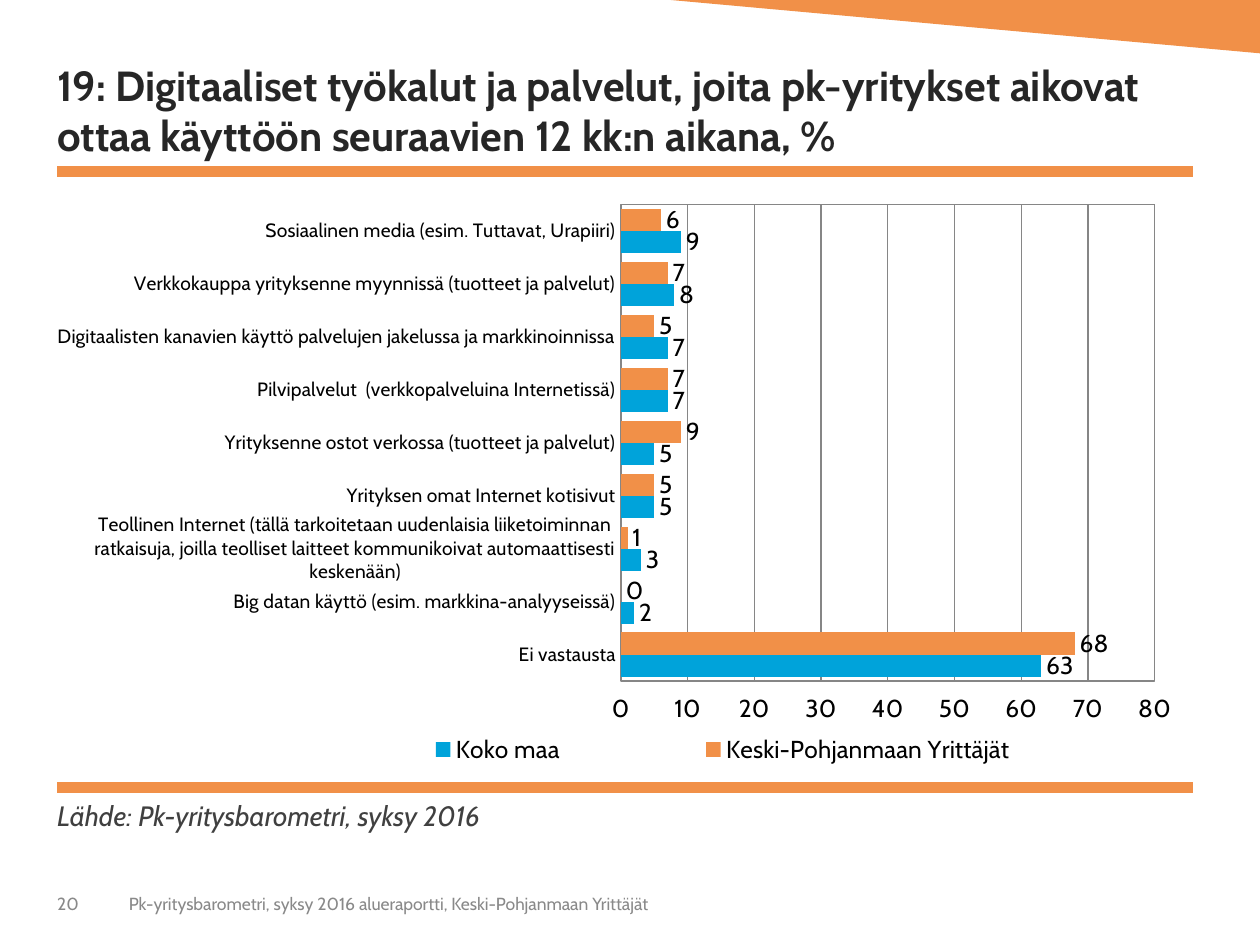
from pptx import Presentation
from pptx.chart.data import CategoryChartData as Data
from pptx.dml.color import RGBColor as RGB
from pptx.enum.chart import (
    XL_CHART_TYPE as Kind,
    XL_LABEL_POSITION as Spot,
    XL_LEGEND_POSITION as Side,
    XL_TICK_LABEL_POSITION as Place,
    XL_TICK_MARK as Tick,
)
from pptx.enum.shapes import MSO_CONNECTOR as Link
from pptx.enum.text import MSO_ANCHOR as Anchor, MSO_AUTO_SIZE as Fit, PP_ALIGN as Align
from pptx.oxml import parse_xml
from pptx.oxml.ns import nsdecls, qn
from pptx.util import Pt

FONT = "Cabin"
ORANGE = RGB(0xF1, 0x90, 0x48)
BLUE = RGB(0x00, 0xA3, 0xDA)
BLACK = RGB(0, 0, 0)
DARK = RGB(0x26, 0x26, 0x26)
SOFT = RGB(0x40, 0x40, 0x40)
GREY = RGB(0x89, 0x89, 0x89)
GRID = RGB(0x86, 0x86, 0x86)

LEFT = 32.7
WIDE = 649.2

CATS = [
    "Sosiaalinen media (esim. Tuttavat, Urapiiri)",
    "Verkkokauppa yrityksenne myynnissä (tuotteet ja palvelut)",
    "Digitaalisten kanavien käyttö palvelujen jakelussa ja markkinoinnissa",
    "Pilvipalvelut  (verkkopalveluina Internetissä)",
    "Yrityksenne ostot verkossa (tuotteet ja palvelut)",
    "Yrityksen omat Internet kotisivut",
    "Teollinen Internet (tällä tarkoitetaan uudenlaisia liiketoiminnan ratkaisuja, "
    "joilla teolliset laitteet kommunikoivat automaattisesti keskenään)",
    "Big datan käyttö (esim. markkina-analyyseissä)",
    "Ei vastausta",
]
SERIES = [
    ("Keski-Pohjanmaan Yrittäjät", ORANGE, (6, 7, 5, 7, 9, 5, 1, 0, 68)),
    ("Koko maa", BLUE, (9, 8, 7, 7, 5, 5, 3, 2, 63)),
]


def set_font(font, size, color):
    font.name = FONT
    font.size = Pt(size)
    font.color.rgb = color


def set_text(shape, text, box, size, color, pad, anchor, bold=False, slant=False):
    shape.left, shape.top, shape.width, shape.height = map(Pt, box)
    frame = shape.text_frame
    frame.text = text
    frame.word_wrap = True
    frame.auto_size = Fit.NONE
    frame.vertical_anchor = anchor
    frame.margin_left, frame.margin_top, frame.margin_right, frame.margin_bottom = map(Pt, pad)
    para = frame.paragraphs[0]
    para.alignment = Align.LEFT
    font = para.runs[0].font
    set_font(font, size, color)
    font.bold = bold
    font.italic = slant


def add_text(slide, text, box, *style, **more):
    shape = slide.shapes.add_textbox(*map(Pt, box))
    set_text(shape, text, box, *style, **more)


def add_wedge(slide):
    form = slide.shapes.build_freeform(Pt(383), 0)
    form.add_line_segments([(Pt(720), 0), (Pt(720), Pt(30.5))], close=True)
    shape = form.convert_to_shape()
    shape.shadow.inherit = False
    shape.fill.solid()
    shape.fill.fore_color.rgb = ORANGE
    shape.line.fill.background()


def add_rule(slide, top):
    rule = slide.shapes.add_connector(Link.STRAIGHT, Pt(LEFT), Pt(top), Pt(LEFT + WIDE), Pt(top))
    rule.line.color.rgb = ORANGE
    rule.line.width = Pt(6)
    rule._element.spPr.append(parse_xml(f"<a:effectLst {nsdecls('a')}/>"))


def set_place(node, index, box, inner=False):
    for old in node.findall(qn("c:layout")):
        node.remove(old)
    target = '<c:layoutTarget val="inner"/>' if inner else ""
    modes = "".join(f'<c:{side}Mode val="edge"/>' for side in "xy")
    sizes = "".join(f'<c:{key} val="{val}"/>' for key, val in zip("xywh", box))
    node.insert(index, parse_xml(
        f"<c:layout {nsdecls('c')}><c:manualLayout>{target}{modes}{sizes}"
        "</c:manualLayout></c:layout>"))


def set_axes(chart):
    cat, val = chart.category_axis, chart.value_axis
    cat.reverse_order = True
    val.tick_label_position = Place.HIGH
    val.minimum_scale, val.maximum_scale, val.major_unit = 0, 80, 10
    val.tick_labels.number_format = "0"
    val.tick_labels.number_format_is_linked = False
    val.has_major_gridlines = True
    val.major_gridlines.format.line.color.rgb = GRID
    for axis, size in ((cat, 11), (val, 14)):
        axis.major_tick_mark = axis.minor_tick_mark = Tick.NONE
        axis.format.line.color.rgb = GRID
        set_font(axis.tick_labels.font, size, BLACK)


def set_bars(chart):
    plot = chart.plots[0]
    plot.gap_width = 40
    plot.overlap = 0
    plot.vary_by_categories = False
    for bar, (_, color, _) in zip(plot.series, SERIES):
        bar.format.fill.solid()
        bar.format.fill.fore_color.rgb = color
        tags = bar.data_labels
        tags.show_value = True
        tags.position = Spot.OUTSIDE_END
        tags.number_format = "#,##0"
        tags.number_format_is_linked = False
        set_font(tags.font, 14, BLACK)


def add_bars(slide):
    data = Data()
    data.categories = CATS
    for name, _, vals in SERIES:
        data.add_series(name, vals)
    chart = slide.shapes.add_chart(
        Kind.BAR_CLUSTERED, Pt(LEFT), Pt(113), Pt(WIDE), Pt(332), data).chart
    chart.has_title = False
    set_font(chart.font, 18, BLACK)
    set_axes(chart)
    set_bars(chart)
    chart.has_legend = True
    chart.legend.position = Side.RIGHT
    chart.legend.include_in_layout = False
    set_font(chart.legend.font, 14, BLACK)
    area = chart.element.xpath("c:chart/c:plotArea")[0]
    set_place(area, 0, (0.495, 0.012, 0.471, 0.82), inner=True)
    area.append(parse_xml(
        f"<c:spPr {nsdecls('c', 'a')}><a:noFill/><a:ln w=\"9525\"><a:solidFill>"
        f'<a:srgbClr val="{GRID}"/></a:solidFill></a:ln></c:spPr>'))
    set_place(chart.element.xpath("c:chart/c:legend")[0], 1, (0.21, 0.91, 0.75, 0.08))


def main():
    deck = Presentation()
    deck.slide_width, deck.slide_height = Pt(720), Pt(540)
    slide = deck.slides.add_slide(deck.slide_layouts[5])
    add_wedge(slide)
    for top in (98, 450):
        add_rule(slide, top)
    add_bars(slide)
    set_text(
        slide.shapes.title,
        "19: Digitaaliset työkalut ja palvelut, joita pk-yritykset aikovat "
        "ottaa käyttöön seuraavien 12 kk:n aikana, %",
        (LEFT, 23.8, 648, 67.7), 24, DARK, (0, 0, 0, 0), Anchor.BOTTOM, bold=True)
    add_text(slide, "Lähde: Pk-yritysbarometri, syksy 2016", (LEFT, 453, WIDE, 31),
             16, SOFT, (0, 3.6, 0, 3.6), Anchor.TOP, slant=True)
    add_text(slide, "Pk-yritysbarometri, syksy 2016 alueraportti, Keski-Pohjanmaan Yrittäjät",
             (66.5, 502, 345, 28.8), 10, GREY, (7.2, 3.6, 7.2, 3.6), Anchor.MIDDLE)
    add_text(slide, "20", (LEFT, 502, 33.8, 28.8), 10, GREY, (0, 3.6, 7.2, 3.6), Anchor.MIDDLE)
    deck.save("out.pptx")


if __name__ == "__main__":
    main()
